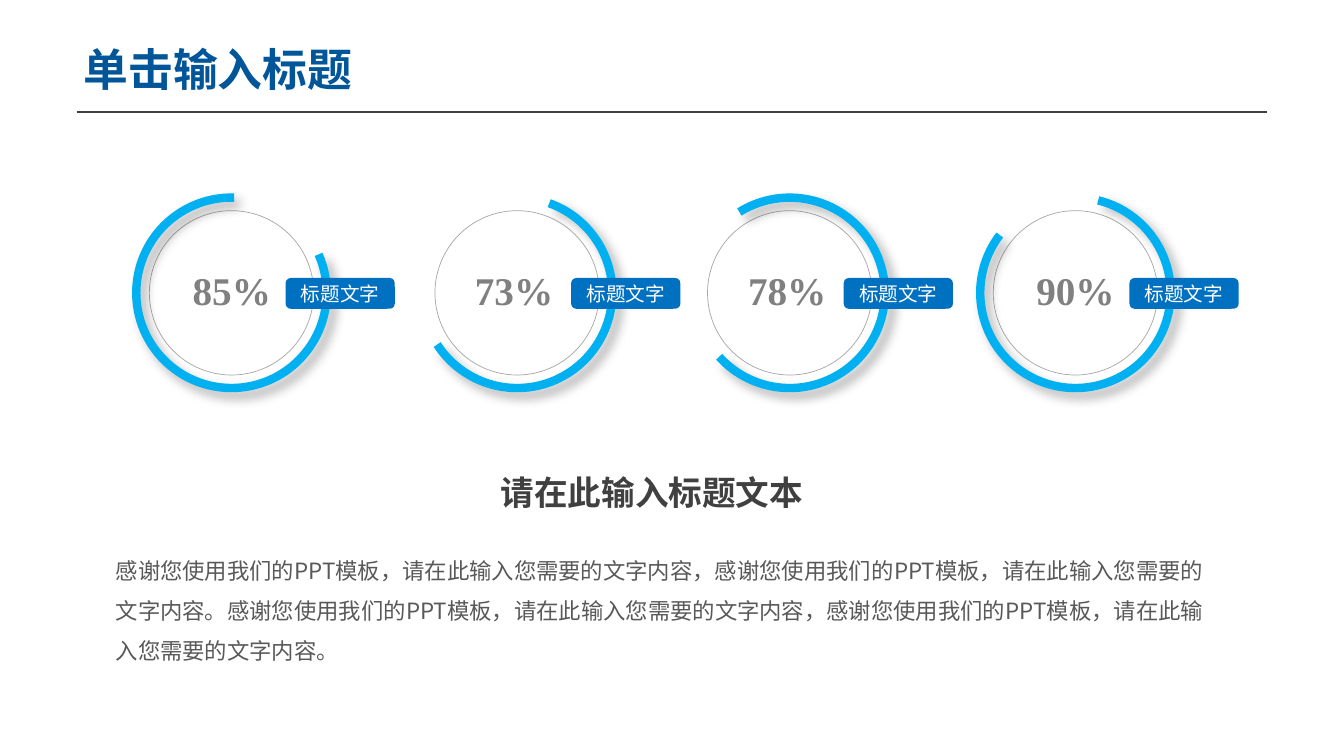
"""Build a slide with four ring gauges above a heading and body text."""
from lxml import etree
from pptx import Presentation
from pptx.dml.color import RGBColor
from pptx.enum.shapes import MSO_CONNECTOR, MSO_SHAPE
from pptx.enum.text import MSO_ANCHOR, MSO_AUTO_SIZE, PP_ALIGN
from pptx.oxml import parse_xml
from pptx.oxml.ns import qn
from pptx.util import Pt

OVAL, ARC, ROUND = MSO_SHAPE.OVAL, MSO_SHAPE.ARC, MSO_SHAPE.ROUNDED_RECTANGLE
LINE = MSO_CONNECTOR.STRAIGHT
LEFT, CENTER = PP_ALIGN.LEFT, PP_ALIGN.CENTER
MIDDLE, TOP = MSO_ANCHOR.MIDDLE, MSO_ANCHOR.TOP
GROW = MSO_AUTO_SIZE.SHAPE_TO_FIT_TEXT


class Theme:
    sans, serif = "Noto Sans CJK SC", "Times New Roman"
    rule, rim, ring, tag = "404040", "A6A6A6", "00B0F0", "0070C0"
    title = {"size": 32, "bold": True, "color": "005699", "name": sans}
    rate = {"size": 28, "bold": True, "color": "808080", "name": serif}
    label = {"size": 14, "bold": False, "color": "FFFFFF", "name": sans}
    head = {"size": 24, "bold": True, "color": "404040", "name": sans}
    body = {"size": 16, "bold": False, "color": "595959", "name": sans}


SHADOW = (
    '<a:effectLst xmlns:a="http://schemas.openxmlformats.org/drawingml/2006/main">'
    '<a:outerShdw blurRad="101600" dist="76200" dir="2700000" algn="tl" rotWithShape="0">'
    '<a:srgbClr val="000000"><a:alpha val="30000"/></a:srgbClr>'
    "</a:outerShdw></a:effectLst>"
)

deck = Presentation()
deck.slide_width, deck.slide_height = Pt(960), Pt(540)
slide = deck.slides.add_slide(deck.slide_layouts[6])
shapes = slide.shapes


def write(shape, lines, style, align=CENTER, inset=None, space=None, wrap=True, anchor=TOP):
    frame = shape.text_frame
    frame.word_wrap, frame.vertical_anchor = wrap, anchor
    if inset is not None:
        for side in ("left", "top", "right", "bottom"):
            setattr(frame, f"margin_{side}", Pt(inset))
    for i, line in enumerate(lines):
        para = frame.paragraphs[0] if i == 0 else frame.add_paragraph()
        para.alignment, para.line_spacing = align, space
        run = para.add_run()
        run.text = line
        values = {**style, "size": Pt(style["size"])}
        run.font.color.rgb = RGBColor.from_string(values.pop("color"))
        for key, value in values.items():
            setattr(run.font, key, value)
        east = etree.SubElement(run.font._element, qn("a:ea"))
        east.set("typeface", style["name"])


def draw(kind, x, y, w, h, fill=None, line=None, width=0):
    shape = shapes.add_shape(kind, Pt(x), Pt(y), Pt(w), Pt(h))
    shape.shadow.inherit = False
    for part, color in ((shape.fill, fill), (shape.line.fill, line)):
        if color:
            part.solid()
            part.fore_color.rgb = RGBColor.from_string(color)
        else:
            part.background()
    if line:
        shape.line.width = Pt(width)
    return shape


rule = shapes.add_connector(LINE, Pt(55), Pt(80), Pt(905), Pt(80))
rule.line.width = Pt(1)
rule.line.color.rgb = RGBColor.from_string(Theme.rule)
etree.SubElement(rule._element.spPr, qn("a:effectLst"))

mid, disc, ring = 209.2, 117.4, 136
gauges = [
    ("85%", 165.4, 336.2, 271.6, 165.6),
    ("73%", 369.4, 289.7, 147.1, 367.2),
    ("78%", 564.1, 238.1, 137.8, 562.3),
    ("90%", 768.2, 283.8, 217.4, 768.2),
]
for rate, x, start, end, center in gauges:
    draw(OVAL, x - disc / 2, mid - disc / 2, disc, disc, line=Theme.rim, width=0.5)
    arc = draw(ARC, x - ring / 2, mid - ring / 2, ring, ring, line=Theme.ring, width=6)
    for i, angle in enumerate((start, end)):
        arc.adjustments[i] = angle * 0.6
    props = arc._element.spPr
    props.replace(props.find(qn("a:effectLst")), parse_xml(SHADOW))
    box = shapes.add_textbox(Pt(center - 36.5), Pt(186.5), Pt(73), Pt(41))
    write(box, [rate], Theme.rate)
    tag = draw(ROUND, x + 38.6, 198.6, 78, 22, fill=Theme.tag)
    write(tag, ["标题文字"], Theme.label, inset=0, anchor=MIDDLE)

head = shapes.add_textbox(Pt(345.6), Pt(337), Pt(240), Pt(29))
write(head, ["请在此输入标题文本"], Theme.head, inset=0)

body = shapes.add_textbox(Pt(75.6), Pt(384.5), Pt(801.4), Pt(89.3))
write(body, [
    "感谢您使用我们的PPT模板，请在此输入您需要的文字内容，感谢您使用我们的PPT模板，请在此输入您需要的",
    "文字内容。感谢您使用我们的PPT模板，请在此输入您需要的文字内容，感谢您使用我们的PPT模板，请在此输入您需要的文字内容。",
], Theme.body, align=LEFT, space=1.5)

title = shapes.add_textbox(Pt(52.6), Pt(26), Pt(208), Pt(46))
write(title, ["单击输入标题"], Theme.title, align=LEFT, wrap=False)
title.text_frame.auto_size = GROW

deck.save("out.pptx")
